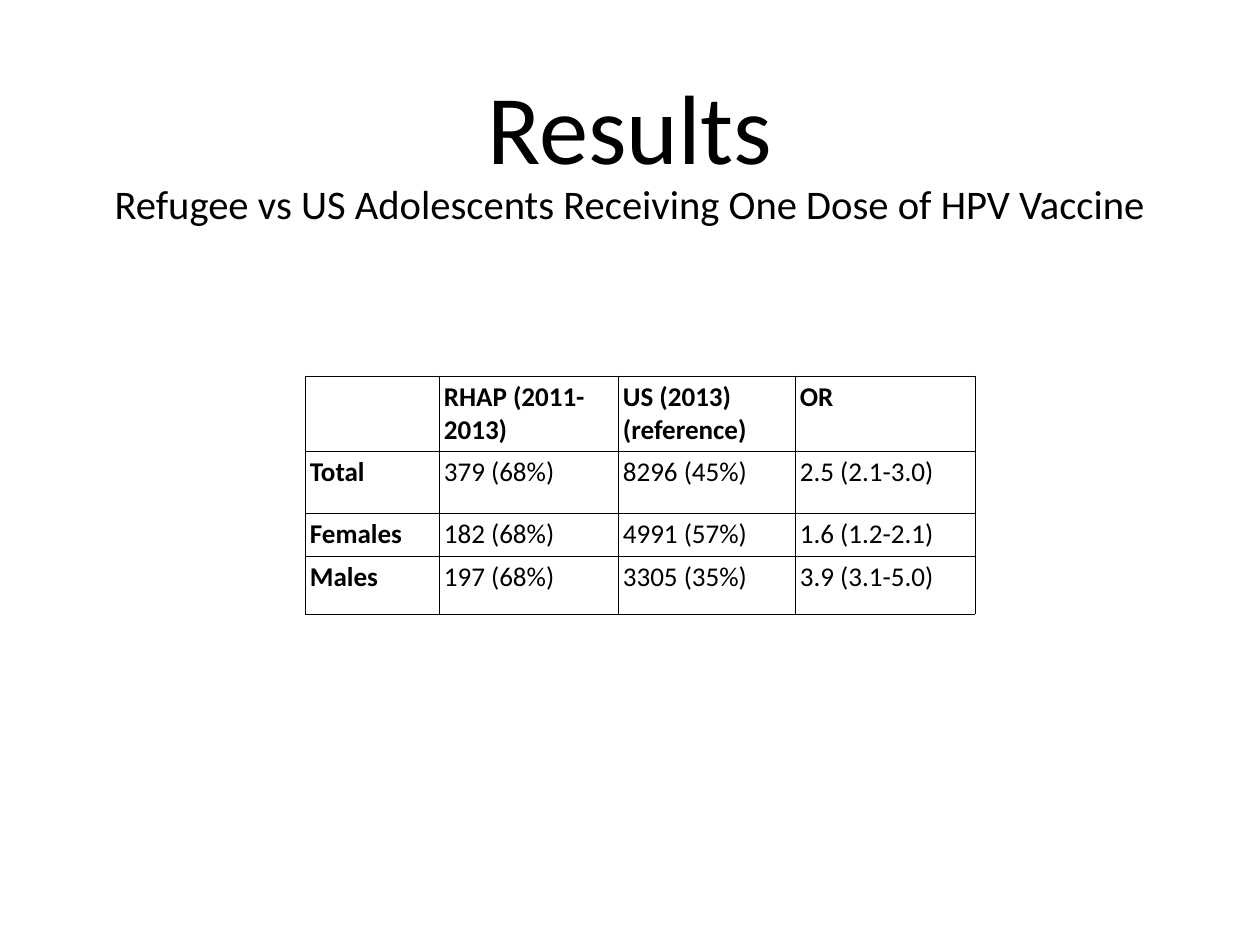
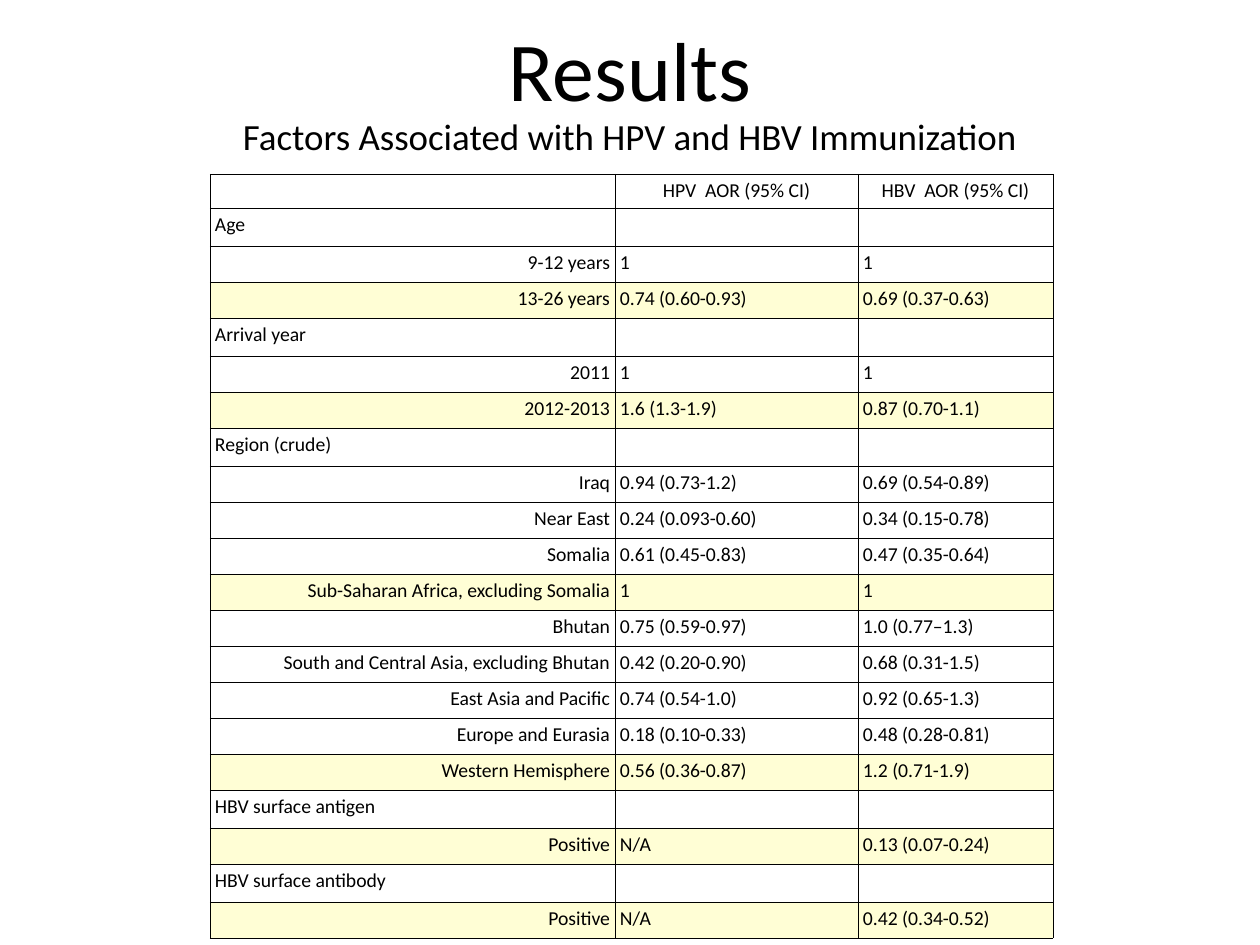
from lxml import etree
from pptx import Presentation
from pptx import util as u
from pptx.dml import color
from pptx.enum import text
from pptx.oxml import ns

PX = 10320
FONT = "Calibri"
COLORS = {"ink": "000000", "highlight": "FFFED5"}
CELL_INSET = 5
BORDER_POINTS = 0.25
LEFT, CENTER, RIGHT = text.PP_ALIGN.LEFT, text.PP_ALIGN.CENTER, text.PP_ALIGN.RIGHT

DOSE_ROWS = [
    ("", "RHAP (2011-2013)", "US (2013)\v(reference)", "OR"),
    ("Total", "379 (68%)", "8296 (45%)", "2.5 (2.1-3.0)"),
    ("Females", "182 (68%)", "4991 (57%)", "1.6 (1.2-2.1)"),
    ("Males", "197 (68%)", "3305 (35%)", "3.9 (3.1-5.0)"),
]

FACTOR_HEADER = ("", "HPV  AOR (95% CI)", "HBV  AOR (95% CI)")
FACTOR_GROUPS = {
    "Age": [
        ("9-12 years", "1", "1"),
        ("13-26 years", "0.74 (0.60-0.93)", "0.69 (0.37-0.63)"),
    ],
    "Arrival year": [
        ("2011", "1", "1"),
        ("2012-2013", "1.6 (1.3-1.9)", "0.87 (0.70-1.1)"),
    ],
    "Region (crude)": [
        ("Iraq", "0.94 (0.73-1.2)", "0.69 (0.54-0.89)"),
        ("Near East", "0.24 (0.093-0.60)", "0.34 (0.15-0.78)"),
        ("Somalia", "0.61 (0.45-0.83)", "0.47 (0.35-0.64)"),
        ("Sub-Saharan Africa, excluding Somalia", "1", "1"),
        ("Bhutan", "0.75 (0.59-0.97)", "1.0 (0.77–1.3)"),
        ("South and Central Asia, excluding Bhutan", "0.42 (0.20-0.90)", "0.68 (0.31-1.5)"),
        ("East Asia and Pacific", "0.74 (0.54-1.0)", "0.92 (0.65-1.3)"),
        ("Europe and Eurasia", "0.18 (0.10-0.33)", "0.48 (0.28-0.81)"),
        ("Western Hemisphere", "0.56 (0.36-0.87)", "1.2 (0.71-1.9)"),
    ],
    "HBV surface antigen": [("Positive", "N/A", "0.13 (0.07-0.24)")],
    "HBV surface antibody": [("Positive", "N/A", "0.42 (0.34-0.52)")],
}
HIGHLIGHTED = {
    "13-26 years", "2012-2013", "Sub-Saharan Africa, excluding Somalia",
    "Western Hemisphere", "Positive",
}


def px(length):
    return u.Emu(length * PX)


def rgb(name):
    return color.RGBColor.from_string(COLORS[name])


def set_insets(target, inset):
    target.margin_left = target.margin_right = px(inset)
    target.margin_top = target.margin_bottom = px(inset)


def format_paragraph(paragraph, size, align=LEFT, bold=False):
    paragraph.alignment = align
    for run in paragraph.runs:
        run.font.name = FONT
        run.font.size = u.Pt(size)
        run.font.bold = bold
        run.font.color.rgb = rgb("ink")
    if not paragraph.runs:
        # An empty cell needs its own text size, or it stretches the row.
        etree.SubElement(paragraph._p, ns.qn("a:endParaRPr"), sz=str(size * 100))


def add_title(slide, subtitle, height, title_size, subtitle_size):
    frame = slide.shapes.add_textbox(px(92), px(9), px(1076), px(height)).text_frame
    frame.word_wrap = True
    frame.vertical_anchor = text.MSO_ANCHOR.MIDDLE
    set_insets(frame, 0)
    frame.text = f"Results\n{subtitle}"
    for paragraph, size in zip(frame.paragraphs, (title_size, subtitle_size)):
        format_paragraph(paragraph, size, CENTER)
    frame.paragraphs[1].line_spacing = 0.9


def add_borders(cell):
    properties = cell._tc.get_or_add_tcPr()
    for side in ("lnL", "lnR", "lnT", "lnB"):
        line = etree.SubElement(properties, ns.qn(f"a:{side}"), w=str(u.Pt(BORDER_POINTS)))
        fill = etree.SubElement(line, ns.qn("a:solidFill"))
        etree.SubElement(fill, ns.qn("a:srgbClr"), val=COLORS["ink"])


def add_grid(slide, left, top, widths, heights, rows, size, style):
    """Draw a bordered table; style(row, column) gives align, bold and fill name."""
    frame = slide.shapes.add_table(
        len(rows), len(widths), px(left), px(top), px(sum(widths)), px(sum(heights)))
    table = frame.table
    table.first_row = table.horz_banding = False
    for column, width in zip(table.columns, widths):
        column.width = px(width)
    for row, height in zip(table.rows, heights):
        row.height = px(height)
    for r, values in enumerate(rows):
        for c, value in enumerate(values):
            cell = table.cell(r, c)
            align, bold, fill = style(r, c)
            set_insets(cell, CELL_INSET)
            cell.text_frame.text = value
            format_paragraph(cell.text_frame.paragraphs[0], size, align, bold)
            add_borders(cell)
            if fill:
                cell.fill.solid()
                cell.fill.fore_color.rgb = rgb(fill)
            else:
                cell.fill.background()


def add_dose_slide(slide):
    add_title(slide, "Refugee vs US Adolescents Receiving One Dose of HPV Vaccine", 277, 80, 33)

    def style(r, c):
        return LEFT, r == 0 or c == 0, None

    add_grid(slide, 305, 376, [134, 179, 177, 180], [75, 62, 43, 58], DOSE_ROWS, 22, style)


def add_factor_slide(slide):
    add_title(slide, "Factors Associated with HPV and HBV Immunization", 158, 68, 30)
    rows, heights = [FACTOR_HEADER], [34]
    for group, members in FACTOR_GROUPS.items():
        rows += [(group, "", ""), *members]
        heights += [38] + [36] * len(members)

    def style(r, c):
        label = rows[r][0]
        if r == 0:
            align = CENTER
        elif c == 0 and label not in FACTOR_GROUPS:
            align = RIGHT
        else:
            align = LEFT
        return align, False, "highlight" if label in HIGHLIGHTED else None

    add_grid(slide, 210, 174, [405, 243, 195], heights, rows, 16, style)


def main():
    presentation = Presentation()
    presentation.slide_width, presentation.slide_height = px(1260), px(945)
    blank = presentation.slide_layouts[6]
    for build in (add_dose_slide, add_factor_slide):
        build(presentation.slides.add_slide(blank))
    presentation.save("out.pptx")


if __name__ == "__main__":
    main()
